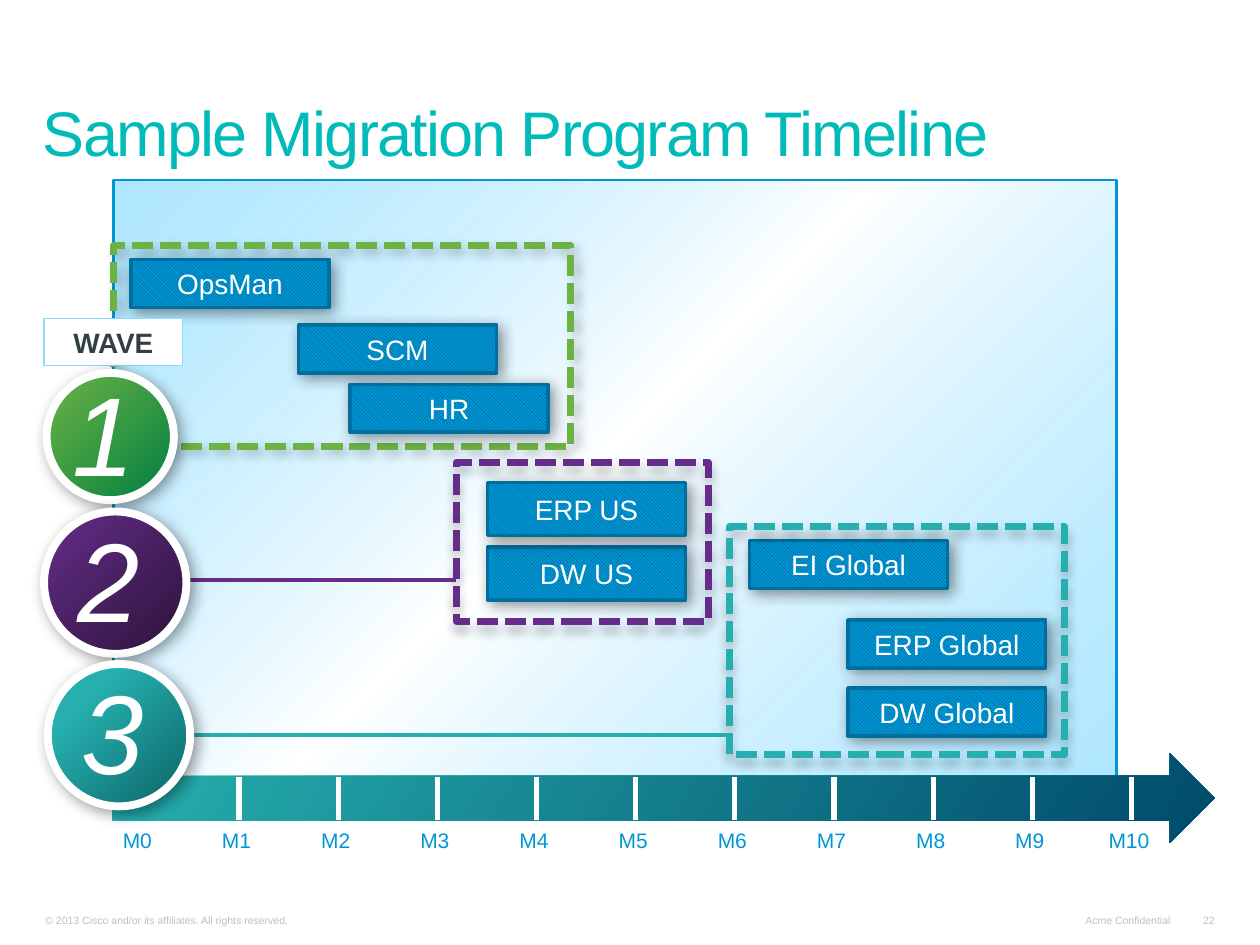
import pptx
import pptx.util
import pptx.dml.color
import pptx.enum.dml
import pptx.enum.shapes
import pptx.enum.text
import pptx.oxml
import pptx.oxml.ns
from lxml import etree

RGB = pptx.dml.color.RGBColor
KIND = pptx.enum.shapes.MSO_SHAPE
ALIGN = pptx.enum.text.PP_ALIGN
ANCHOR = pptx.enum.text.MSO_ANCHOR
DASH = pptx.enum.dml.MSO_LINE.SQUARE_DOT
HATCH = pptx.enum.dml.MSO_PATTERN.LIGHT_DOWNWARD_DIAGONAL

WHITE = RGB(0xFF, 0xFF, 0xFF)
BLACK = RGB(0x00, 0x00, 0x00)
GREY = RGB(0xC0, 0xC0, 0xC0)
INK = RGB(0x33, 0x40, 0x41)
SKY = RGB(0x89, 0xDC, 0xFF)
BLUE = RGB(0x00, 0x96, 0xD6)
EDGE = RGB(0x00, 0x6F, 0x9E)
NAVY = RGB(0x00, 0x4B, 0x6B)
AQUA = RGB(0x01, 0xBB, 0xBB)
LIME = RGB(0x6D, 0xB3, 0x44)
GREEN = RGB(0x00, 0x80, 0x41)
PLUM = RGB(0x65, 0x2D, 0x89)
DUSK = RGB(0x33, 0x17, 0x44)
TEAL = RGB(0x26, 0xAF, 0xAE)
DEEP = RGB(0x0C, 0x64, 0x67)

# The slide is a grid of 100 columns by 75 rows.
WIDE, HIGH = pptx.util.Inches(10), pptx.util.Inches(7.5)
COL, ROW = WIDE / 100, HIGH / 75

MONTHS = 10
START, END = 11.1, 89.8
STEP = (END - START) / MONTHS

# Name, left column, top row, rows high
CARDS = [
    ("OpsMan", 10.4, 20.6, 3.8),
    ("SCM", 23.7, 25.8, 3.8),
    ("HR", 27.8, 30.5, 3.8),
    ("DW US", 38.7, 43.4, 4.2),
    ("ERP US", 38.7, 38.3, 4.2),
    ("EI Global", 59.5, 42.9, 3.8),
    ("DW Global", 67.3, 54.6, 3.8),
    ("ERP Global", 67.3, 49.2, 3.8),
]


def area(x, y, w, h):
    return int(x * COL), int(y * ROW), int(w * COL), int(h * ROW)


def write(box, words, size=16, color=WHITE, bold=False, italic=False,
          align=ALIGN.CENTER, anchor=ANCHOR.MIDDLE, wrap=True,
          pad=(0.9, 0.4, 0.9, 0.4), track=None, lead=None):
    """Put one formatted paragraph in a box; pad is left, top, right, bottom."""
    frame = box.text_frame
    frame.word_wrap = wrap
    frame.vertical_anchor = anchor
    frame.margin_left, frame.margin_right = int(pad[0] * COL), int(pad[2] * COL)
    frame.margin_top, frame.margin_bottom = int(pad[1] * ROW), int(pad[3] * ROW)
    para = frame.paragraphs[0]
    para.alignment = align
    if lead:
        para.line_spacing = lead
    run = para.add_run()
    run.text = words
    font = run.font
    font.name, font.size = "Arial", pptx.util.Pt(size)
    font.bold, font.italic = bold, italic
    font.color.rgb = color
    if track:
        run._r.get_or_add_rPr().set("spc", str(track * 100))


def label(slide, spot, words, **form):
    write(slide.shapes.add_textbox(*area(*spot)), words, **form)


def blend(shape, stops, angle):
    """Fill with a gradient; each stop is place, colour, opacity in percent."""
    shape.fill.background()
    marks = "".join(
        f'<a:gs pos="{at * 1000}"><a:srgbClr val="{color}">'
        f'<a:alpha val="{show * 1000}"/></a:srgbClr></a:gs>'
        for at, color, show in stops)
    grad = pptx.oxml.parse_xml(
        f'<a:gradFill {pptx.oxml.ns.nsdecls("a")} rotWithShape="1">'
        f'<a:gsLst>{marks}</a:gsLst>'
        f'<a:lin ang="{angle * 60000}" scaled="0"/></a:gradFill>')
    props = shape._element.spPr
    props.replace(props.find(pptx.oxml.ns.qn("a:noFill")), grad)


def shade(shape, show, blur, dist, angle):
    effects = shape._element.spPr.find(pptx.oxml.ns.qn("a:effectLst"))
    effects.append(pptx.oxml.parse_xml(
        f'<a:outerShdw {pptx.oxml.ns.nsdecls("a")} blurRad="{int(blur * 12700)}" '
        f'dist="{dist * 12700}" dir="{angle * 60000}" algn="ctr" rotWithShape="0">'
        f'<a:srgbClr val="{BLACK}"><a:alpha val="{show * 1000}"/></a:srgbClr>'
        f'</a:outerShdw>'))


def block(slide, kind, spot, fill=None, line=None, width=1):
    shape = slide.shapes.add_shape(kind, *area(*spot))
    shape.shadow.inherit = False
    if fill is None:
        shape.fill.background()
    else:
        shape.fill.solid()
        shape.fill.fore_color.rgb = fill
    if line is None:
        shape.line.fill.background()
    else:
        shape.line.color.rgb = line
        shape.line.width = pptx.util.Pt(width)
    return shape


def rule(slide, x1, y1, x2, y2, color, width):
    line = slide.shapes.add_connector(
        pptx.enum.shapes.MSO_CONNECTOR.STRAIGHT,
        int(x1 * COL), int(y1 * ROW), int(x2 * COL), int(y2 * ROW))
    line.line.color.rgb = color
    line.line.width = pptx.util.Pt(width)
    etree.SubElement(line._element.spPr, pptx.oxml.ns.qn("a:effectLst"))


def group(slide, spot, color, show, angle):
    """Dashed frame around the cards of one wave."""
    frame = block(slide, KIND.RECTANGLE, spot, line=color, width=4)
    frame.line.dash_style = DASH
    shade(frame, show, 6, 4, angle)


def card(slide, name, x, y, h):
    shape = block(slide, KIND.RECTANGLE, (x, y, 15.7, h), line=EDGE, width=2)
    shape.fill.patterned()
    shape.fill.pattern = HATCH
    shape.fill.fore_color.rgb = NAVY
    shape.fill.back_color.rgb = BLUE
    shade(shape, 43, 8.8, 3, 45)
    write(shape, name)


def badge(slide, num, x, y, size, stops):
    disc = block(slide, KIND.OVAL, (x, y, size, size), line=WHITE, width=4.5)
    blend(disc, stops, 45)
    shade(disc, 40, 8.8, 3, 45)
    write(disc, num, size=64, italic=True, wrap=False, pad=(0, 0, 1, 0.8))


def axis(slide):
    arrow = block(slide, KIND.RIGHT_ARROW, (8.9, 59.8, 87.5, 7.1))
    blend(arrow, [(0, TEAL, 100), (100, NAVY, 100)], 32)
    for month in range(MONTHS + 1):
        x = START + month * STEP
        if month:
            rule(slide, x, 61.7, x, 65.1, WHITE, 3)
        label(slide, (x - 3.1, 65.2, 5.8, 3), f"M{month}", size=12, color=BLUE)


def footer(slide):
    notes = [
        ("© 2013 Cisco and/or its affiliates. All rights reserved.",
         2.7, 37.4, ALIGN.LEFT),
        ("Acme Confidential", 85.1, 8.7, ALIGN.RIGHT),
        ("22", 94.5, 2.8, ALIGN.RIGHT),
    ]
    for words, x, w, align in notes:
        label(slide, (x, 72, w, 1.9), words, size=6, color=GREY,
              align=align, anchor=ANCHOR.BOTTOM)


def main():
    deck = pptx.Presentation()
    deck.slide_width, deck.slide_height = WIDE, HIGH
    slide = deck.slides.add_slide(deck.slide_layouts[6])

    footer(slide)
    panel = block(slide, KIND.RECTANGLE, (9, 14.3, 79.6, 49.6), line=BLUE, width=1.5)
    blend(panel, [(0, SKY, 68), (47, WHITE, 100), (100, SKY, 68)], 45)
    group(slide, (9, 19.5, 36.3, 15.9), LIME, 25, 45)
    axis(slide)
    label(slide, (2.5, 4.7, 93.9, 9.2), "Sample Migration Program Timeline",
          size=36, color=AQUA, align=ALIGN.LEFT, anchor=ANCHOR.BOTTOM,
          pad=(0.9, 0.5, 0.9, 0.5), track=-1, lead=0.8)
    for item in CARDS:
        card(slide, *item)
    group(slide, (36.2, 36.7, 20, 12.6), PLUM, 27, 90)
    group(slide, (57.9, 41.8, 26.6, 18.1), TEAL, 27, 90)

    tag = block(slide, KIND.RECTANGLE, (3.5, 25.3, 11, 3.7), WHITE, SKY, 0.75)
    write(tag, "WAVE", color=INK, bold=True)
    rule(slide, 15.1, 46, 36.2, 46, PLUM, 2.25)
    rule(slide, 15.1, 58.3, 57.9, 58.3, TEAL, 2.25)
    badge(slide, "1", 3.7, 29.6, 10.1, [(0, LIME, 100), (100, GREEN, 100)])
    badge(slide, "2", 3.5, 40.6, 11.3, [(0, PLUM, 100), (88, DUSK, 100)])
    badge(slide, "3", 3.8, 52.7, 11.3, [(26, TEAL, 100), (100, DEEP, 100)])
    deck.save("out.pptx")


if __name__ == "__main__":
    main()
